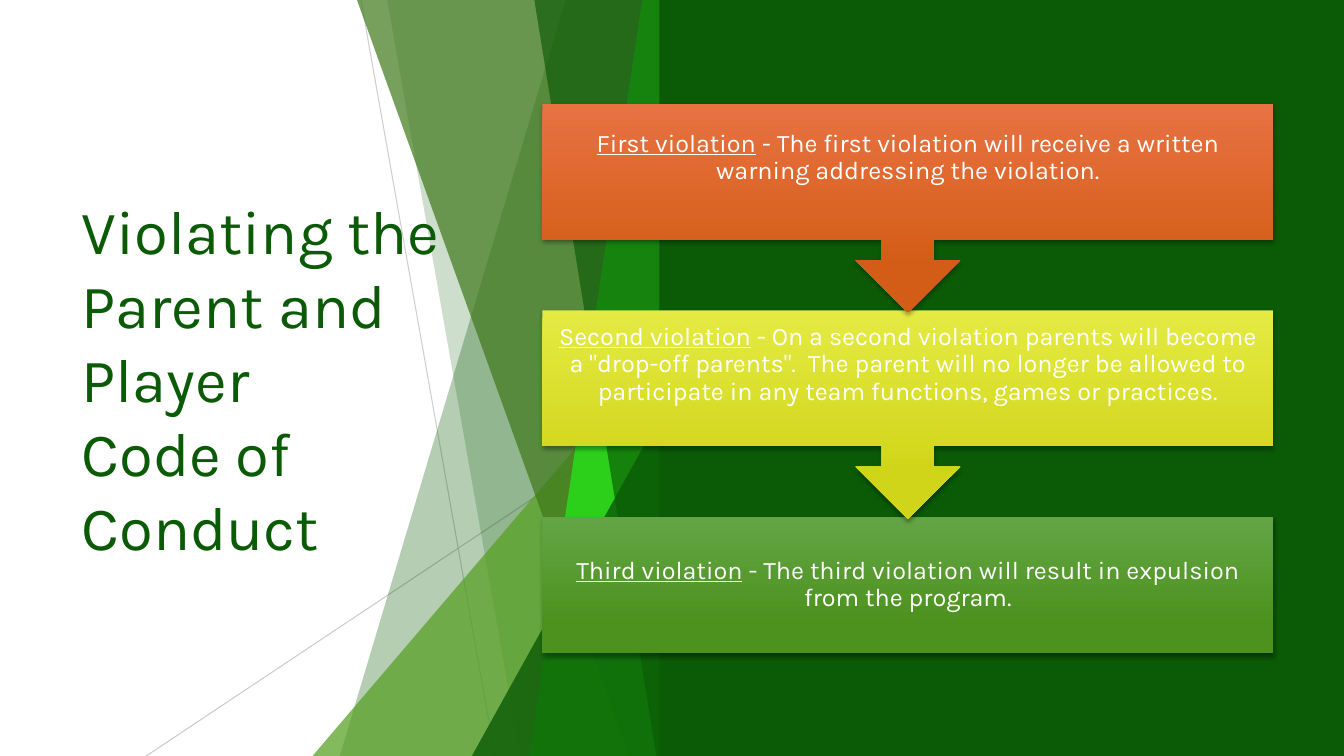
from dataclasses import dataclass

import lxml.etree
import pptx
import pptx.dml.color
import pptx.enum.shapes
import pptx.enum.text
import pptx.oxml.ns
import pptx.util
from pptx.util import Inches

COLORS = {
    "dark green": "0A5A06",
    "leaf": "54A021",
    "moss": "3F7819",
    "neon": "20EF16",
    "gray": "BFBFBF",
    "white": "FFFFFF",
    "black": "000000",
}
FONT = "Karla"
SLIDE_WIDTH, SLIDE_HEIGHT = 13.33, 7.5
FACET_RIGHT = 6.66
STEP_LEFT, STEP_WIDTH = 5.38, 7.25
FIRST_STEP_TOP, STEP_PITCH = 1.03, 2.05
STEP_PADDING = 0.14
Shape = pptx.enum.shapes.MSO_SHAPE


@dataclass
class Ray:
    start: tuple[float, float]
    end: tuple[float, float]
    opacity: int


@dataclass
class Band:
    top_left: float
    bottom_left: float
    color: str
    opacity: int


@dataclass
class Corner:
    left: float
    top: float
    color: str
    opacity: int


@dataclass
class Step:
    heading: str
    detail: str
    gradient: tuple[str, str]
    shape: Shape
    height: float
    bottom_padding: float


RAYS = [Ray((3.58, 0), (4.91, 7.5), 75), Ray((6.66, 4.03), (1.45, 7.5), 80)]
FACETS = [
    Band(5.61, 3.37, "dark green", 30),
    Band(3.84, 5.16, "dark green", 20),
    Corner(3.1, 3.33, "leaf", 72),
    Band(3.54, 6.24, "moss", 70),
    Band(6.37, 5.25, "neon", 70),
    Band(5.3, 6.51, "dark green", 65),
    Corner(4.68, 3.93, "dark green", 80),
]
STEPS = [
    Step("First violation",
         " - The first violation will receive a written warning addressing the violation.",
         ("E87242", "D35D16"), Shape.DOWN_ARROW_CALLOUT, 2.07, 0.41),
    Step("Second violation",
         " - On a second violation parents will become a \"drop-off parents\".  The parent "
         "will no longer be allowed to participate in any team functions, games or practices.",
         ("E5EA43", "D1D519"), Shape.DOWN_ARROW_CALLOUT, 2.07, 0.41),
    Step("Third violation",
         " - The third violation will result in expulsion from the program.",
         ("63A545", "4D921E"), Shape.RECTANGLE, 1.35, STEP_PADDING),
]


def rgb(hex_color: str) -> pptx.dml.color.RGBColor:
    return pptx.dml.color.RGBColor.from_string(hex_color)


def add_child(parent: lxml.etree.ElementBase, tag: str, **attributes: str) -> lxml.etree.ElementBase:
    child = lxml.etree.SubElement(parent, pptx.oxml.ns.qn(tag))
    for name, value in attributes.items():
        child.set(name, value)
    return child


def set_opacity(element: lxml.etree.ElementBase, percent: int) -> None:
    """Make the first plain colour below the element partly transparent."""
    color = next(element.iter(pptx.oxml.ns.qn("a:srgbClr")))
    add_child(color, "a:alpha", val=str(percent * 1000))


def paint(shape: pptx.shapes.autoshape.Shape, color: str, opacity: int = 100) -> None:
    shape.shadow.inherit = False
    shape.line.fill.background()
    shape.fill.solid()
    shape.fill.fore_color.rgb = rgb(COLORS[color])
    if opacity < 100:
        set_opacity(shape.element.spPr, opacity)


def add_title(slide: pptx.slide.Slide) -> None:
    title = slide.shapes.title
    title.left, title.top = Inches(0.71), Inches(1.51)
    title.width, title.height = Inches(3.88), Inches(4.48)
    frame = title.text_frame
    frame.text = "Violating the Parent and Player\vCode of Conduct"
    frame.word_wrap = True
    frame.auto_size = pptx.enum.text.MSO_AUTO_SIZE.NONE
    frame.vertical_anchor = pptx.enum.text.MSO_ANCHOR.MIDDLE
    para = frame.paragraphs[0]
    para.alignment = pptx.enum.text.PP_ALIGN.LEFT
    for span in para.runs:
        span.font.name = FONT
        span.font.size = pptx.util.Pt(44)
        span.font.color.rgb = rgb(COLORS["dark green"])


def add_ray(slide: pptx.slide.Slide, ray: Ray) -> None:
    line = slide.shapes.add_connector(
        pptx.enum.shapes.MSO_CONNECTOR.STRAIGHT,
        *(Inches(value) for value in ray.start + ray.end))
    line.line.color.rgb = rgb(COLORS["gray"])
    line.line.width = pptx.util.Pt(0.75)
    set_opacity(line.element.spPr, ray.opacity)
    add_child(line.element.spPr, "a:effectLst")


def add_facet(slide: pptx.slide.Slide, facet: Band | Corner) -> None:
    """Draw a slanted band or a corner triangle that ends at the common right edge."""
    if isinstance(facet, Band):
        right, bottom = Inches(FACET_RIGHT), Inches(SLIDE_HEIGHT)
        builder = slide.shapes.build_freeform(Inches(facet.top_left), 0)
        builder.add_line_segments(
            [(right, 0), (right, bottom), (Inches(facet.bottom_left), bottom)])
        shape = builder.convert_to_shape()
    else:
        shape = slide.shapes.add_shape(
            Shape.ISOSCELES_TRIANGLE, Inches(facet.left), Inches(facet.top),
            Inches(FACET_RIGHT - facet.left), Inches(SLIDE_HEIGHT - facet.top))
        shape.adjustments[0] = 1
    paint(shape, facet.color, facet.opacity)


def add_panel(slide: pptx.slide.Slide) -> None:
    left = 6.54
    panel = slide.shapes.add_shape(
        Shape.RECTANGLE, Inches(left), 0, Inches(SLIDE_WIDTH - left), Inches(SLIDE_HEIGHT))
    paint(panel, "dark green")


def add_step(slide: pptx.slide.Slide, step: Step, top: float) -> None:
    box = slide.shapes.add_shape(
        step.shape, Inches(STEP_LEFT), Inches(top), Inches(STEP_WIDTH), Inches(step.height))
    box.line.fill.background()
    box.fill.gradient()
    box.fill.gradient_angle = 270
    for stop, color, position in zip(box.fill.gradient_stops, step.gradient, (0, 0.78)):
        stop.color.rgb = rgb(color)
        stop.position = position

    box.shadow.inherit = False
    effects = box.element.spPr.find(pptx.oxml.ns.qn("a:effectLst"))
    shadow = add_child(effects, "a:outerShdw", blurRad=str(pptx.util.Pt(3)),
                       dist=str(pptx.util.Pt(2)), dir="5400000", rotWithShape="0")
    add_child(shadow, "a:srgbClr", val=COLORS["black"])
    set_opacity(shadow, 35)

    frame = box.text_frame
    frame.word_wrap = True
    frame.vertical_anchor = pptx.enum.text.MSO_ANCHOR.MIDDLE
    frame.margin_left = frame.margin_right = frame.margin_top = Inches(STEP_PADDING)
    frame.margin_bottom = Inches(step.bottom_padding)
    para = frame.paragraphs[0]
    para.text = step.heading
    para.add_run().text = step.detail
    para.alignment = pptx.enum.text.PP_ALIGN.CENTER
    para.line_spacing = 0.9
    for span in para.runs:
        span.font.name = FONT
        span.font.size = pptx.util.Pt(18)
        span.font.color.rgb = rgb(COLORS["white"])
    para.runs[0].font.underline = True


def main() -> None:
    deck = pptx.Presentation()
    deck.slide_width, deck.slide_height = Inches(SLIDE_WIDTH), Inches(SLIDE_HEIGHT)
    page = deck.slides.add_slide(deck.slide_layouts.get_by_name("Title Only"))
    add_title(page)
    for ray in RAYS:
        add_ray(page, ray)
    for facet in FACETS:
        add_facet(page, facet)
    add_panel(page)
    for index, step in reversed(list(enumerate(STEPS))):
        add_step(page, step, FIRST_STEP_TOP + index * STEP_PITCH)
    deck.save("out.pptx")


if __name__ == "__main__":
    main()
